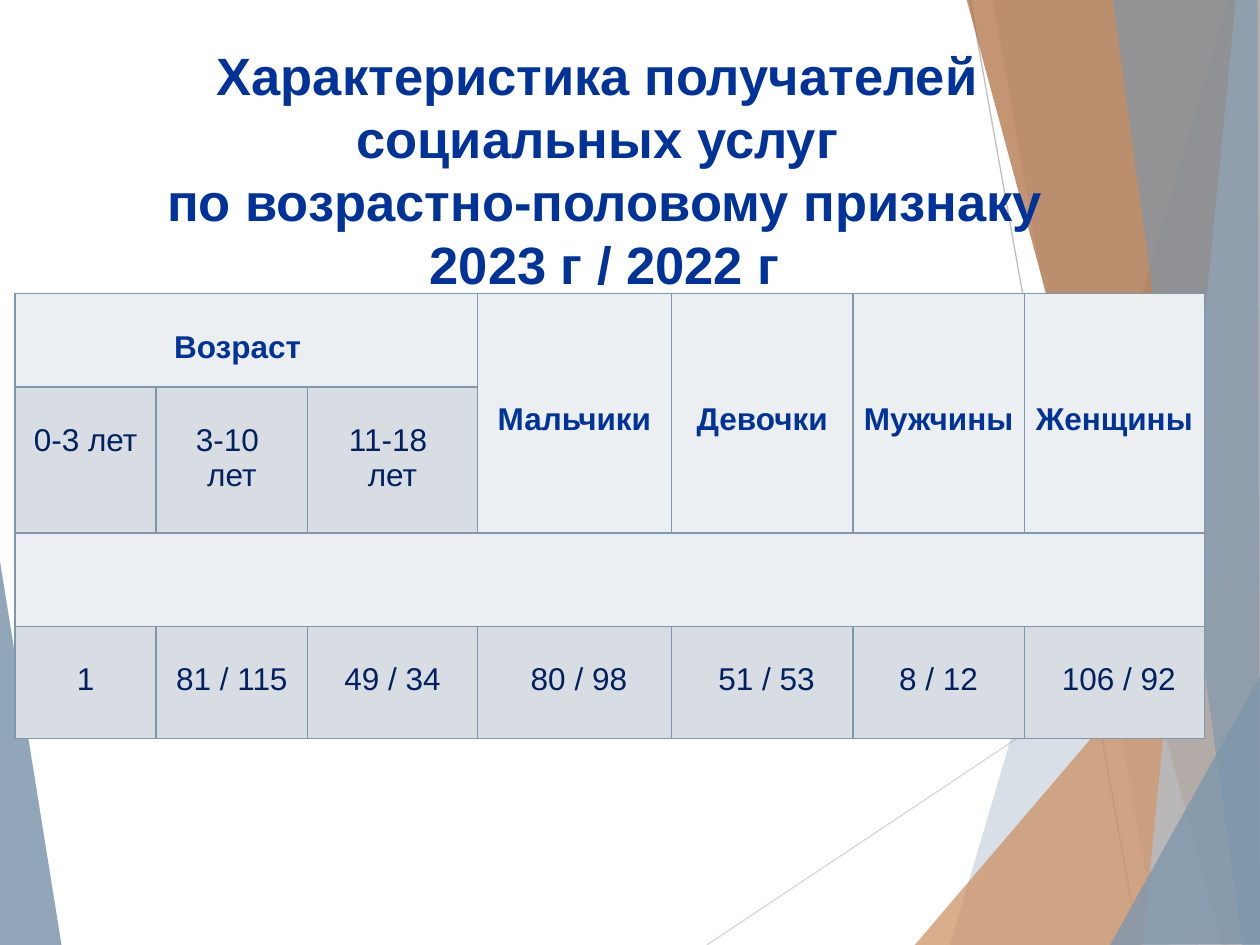
from lxml import etree
from pptx import Presentation
from pptx.dml.color import RGBColor
from pptx.enum.shapes import MSO_CONNECTOR
from pptx.enum.text import MSO_ANCHOR, PP_ALIGN
from pptx.oxml.ns import qn
from pptx.util import Inches, Pt

CENTER = PP_ALIGN.CENTER
TOP = MSO_ANCHOR.TOP
STRAIGHT = MSO_CONNECTOR.STRAIGHT

STEEL, NAVY, ROYAL = "7E97AD", "002060", "003399"
LIGHT, MIDDLE = "ECEFF1", "D8DDE3"
LINE_HEIGHT = 0.287  # one line of 18 pt text, inches

LEFT_FACET = ([(-0.01, 4.39), (0.49, 7.51), (-0.01, 7.5)], STEEL, 85)
RAYS = [((5.61, 7.5), (10.01, 4.57), "D9D9D9"),
        ((7.7, 0), (9.04, 7.5), "BFBFBF")]
RIGHT_FACETS = [
    ([(9.75, 0), (7.54, 7.5), (10.02, 7.51), (10.01, 0.01)], STEEL, 30),
    ([(7.88, -0.01), (9.19, 7.5), (10.01, 7.5), (10.01, -0.01)], STEEL, 20),
    ([(7.26, 7.5), (10, 4.29), (10.01, 7.5)], "CC8E60", 72),
    ([(7.67, -0.01), (9.7, 7.5), (10.01, 7.49), (10.01, -0.01)], "AA6837", 70),
    ([(9.81, -0.01), (9.07, 7.5), (10.01, 7.5), (10, -0.01)], "B2C1CE", 70),
    ([(8.83, -0.01), (9.86, 7.5), (10, 7.5), (9.98, -0.01)], STEEL, 65),
    ([(8.81, 7.5), (10.01, 5.35), (10.01, 7.49)], STEEL, 80),
]

TITLE = ("Характеристика получателей \vсоциальных услуг \v"
         "по возрастно-половому признаку\v2023 г / 2022 г")
COLUMNS = [1.12, 1.2, 1.35, 1.54, 1.44, 1.36, 1.43]
ROWS = [0.74, 1.12, 0.74, 0.89]
ROW_FILLS = [LIGHT, MIDDLE, LIGHT, MIDDLE]
GROUPS = ["Мальчики", "Девочки", "Мужчины ", "Женщины "]
AGES = ["0-3 лет", "3-10 \nлет", "11-18 \nлет"]
COUNTS = ["1", "81 / 115", "49 / 34", " 80 / 98", " 51 / 53", "8 / 12", " 106 / 92"]


def color(value):
    return RGBColor.from_string(value)


def set_all(target, values):
    for name, value in values.items():
        setattr(target, name, value)


def style_font(font, size, value, bold):
    set_all(font, {"name": "Arial", "size": Pt(size), "bold": bold})
    font.color.rgb = color(value)


def add_facet(slide, points, value, opacity):
    """Draw a translucent polygon without an outline."""
    corners = [(Inches(x), Inches(y)) for x, y in points]
    builder = slide.shapes.build_freeform(*corners[0], scale=1.0)
    builder.add_line_segments(corners[1:], close=True)
    facet = builder.convert_to_shape()
    facet.shadow.inherit = False
    facet.line.fill.background()
    facet.fill.solid()
    facet.fill.fore_color.rgb = color(value)
    tint = facet.fill._xPr.find(".//" + qn("a:srgbClr"))
    etree.SubElement(tint, qn("a:alpha"), val=str(opacity * 1000))


def add_ray(slide, start, end, value):
    ends = [Inches(length) for length in (*start, *end)]
    ray = slide.shapes.add_connector(STRAIGHT, *ends)
    ray.line.color.rgb = color(value)
    ray.line.width = Pt(0.75)
    etree.SubElement(ray._element.spPr, qn("a:effectLst"))


def add_title(slide):
    box = slide.shapes.add_textbox(Inches(0.35), Inches(0.29), Inches(8.9), Inches(2.05))
    set_all(box.text_frame, {"word_wrap": True, "vertical_anchor": TOP})
    para = box.text_frame.paragraphs[0]
    para.text = TITLE
    set_all(para, {"alignment": CENTER, "line_spacing": Pt(36)})
    for span in para.runs:
        style_font(span.font, 30, ROYAL, True)


def add_borders(cell):
    properties = cell._tc.get_or_add_tcPr()
    for position, side in enumerate(("lnL", "lnR", "lnT", "lnB")):
        border = etree.Element(qn("a:" + side), w=str(Pt(1)))
        fill = etree.SubElement(border, qn("a:solidFill"))
        etree.SubElement(fill, qn("a:srgbClr"), val=STEEL)
        properties.insert(position, border)


def write_cell(cell, text, value, bold=False, lines_above=1):
    """Fill a cell with text that starts a number of lines below its top."""
    cell.margin_top = Inches(lines_above * LINE_HEIGHT)
    cell.text = text
    for para in cell.text_frame.paragraphs:
        para.alignment = CENTER
        for span in para.runs:
            style_font(span.font, 18, value, bold)


def add_recipient_table(slide):
    frame = slide.shapes.add_table(
        len(ROWS), len(COLUMNS), Inches(0.12), Inches(2.33),
        Inches(sum(COLUMNS)), Inches(sum(ROWS)))
    table = frame.table
    set_all(table, {"first_row": False, "horz_banding": False})
    for column, width in zip(table.columns, COLUMNS):
        column.width = Inches(width)
    for row, height, value in zip(table.rows, ROWS, ROW_FILLS):
        row.height = Inches(height)
        for cell in row.cells:
            set_all(cell, {"margin_left": Inches(0.07), "margin_right": Inches(0.07),
                           "margin_top": 0, "margin_bottom": 0,
                           "vertical_anchor": TOP})
            cell.fill.solid()
            cell.fill.fore_color.rgb = color(value)
            add_borders(cell)

    table.cell(0, 0).merge(table.cell(0, 2))
    table.cell(2, 0).merge(table.cell(2, 6))
    write_cell(table.cell(0, 0), "Возраст  ", ROYAL, bold=True)
    for column, group in enumerate(GROUPS, start=len(AGES)):
        table.cell(0, column).merge(table.cell(1, column))
        write_cell(table.cell(0, column), group, ROYAL, bold=True, lines_above=3)
    for row, texts in ((1, AGES), (3, COUNTS)):
        for column, text in enumerate(texts):
            write_cell(table.cell(row, column), text, NAVY)


def main():
    deck = Presentation()
    set_all(deck, {"slide_width": Inches(10), "slide_height": Inches(7.5)})
    slide = deck.slides.add_slide(deck.slide_layouts[6])
    add_facet(slide, *LEFT_FACET)
    for ray in RAYS:
        add_ray(slide, *ray)
    for facet in RIGHT_FACETS:
        add_facet(slide, *facet)
    add_title(slide)
    add_recipient_table(slide)
    deck.save("out.pptx")


if __name__ == "__main__":
    main()
